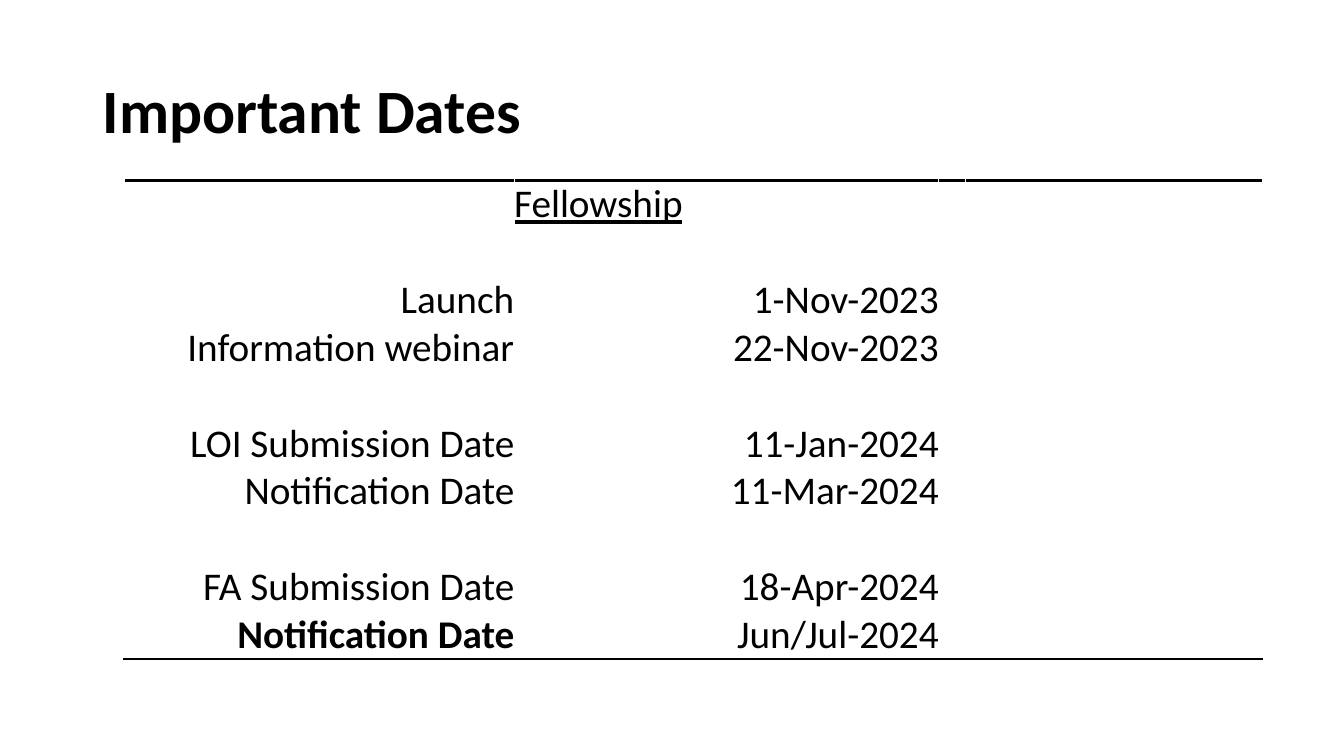
from lxml.etree import SubElement
from pptx import Presentation
from pptx.dml.color import RGBColor
from pptx.enum.text import MSO_ANCHOR, PP_ALIGN
from pptx.oxml.ns import qn
from pptx.util import Inches, Pt

TITLE = "Important Dates"
HEADING = "Fellowship"
SCHEDULE = [
    ("", HEADING),
    ("", ""),
    ("Launch", "1-Nov-2023"),
    ("Information webinar", "22-Nov-2023"),
    ("", ""),
    ("LOI Submission Date", "11-Jan-2024"),
    ("Notification Date", "11-Mar-2024"),
    ("", ""),
    ("FA Submission Date", "18-Apr-2024"),
    ("Notification Date", "Jun/Jul-2024"),
]
COLUMN_WIDTHS = [3.87, 4.21, 0.27, 2.94]
TABLE_LEFT, TABLE_TOP, TABLE_HEIGHT = 1.23, 1.79, 4.75
COLORS = {"text": "000000", "rule": "000000", "paper": "FFFFFF"}
FONT = "Calibri"
LAST_ROW = len(SCHEDULE) - 1


def add_text(paragraph, text, size, bold=False, underline=False):
    run = paragraph.add_run()
    run.text = text
    run.font.name = FONT
    run.font.size = Pt(size)
    run.font.bold = bold
    run.font.underline = underline
    run.font.color.rgb = RGBColor.from_string(COLORS["text"])


def add_border(cell, side):
    properties = cell._tc.get_or_add_tcPr()
    line = SubElement(properties, qn(f"a:ln{side}"), w=str(Pt(2)))
    fill = SubElement(line, qn("a:solidFill"))
    SubElement(fill, qn("a:srgbClr"), val=COLORS["rule"])
    properties.insert(0, line)


def add_title(slide):
    shape = slide.shapes.add_textbox(Inches(0.92), Inches(0.4), Inches(11.5), Inches(1.45))
    frame = shape.text_frame
    frame.word_wrap = True
    frame.vertical_anchor = MSO_ANCHOR.MIDDLE
    paragraph = frame.paragraphs[0]
    paragraph.line_spacing = 0.9
    add_text(paragraph, TITLE, 44, bold=True)


def fill_cell(cell, text, row):
    cell.fill.solid()
    cell.fill.fore_color.rgb = RGBColor.from_string(COLORS["paper"])
    cell.margin_left = cell.margin_right = cell.margin_top = cell.margin_bottom = 0
    cell.vertical_anchor = MSO_ANCHOR.BOTTOM
    if row == 0:
        add_border(cell, "T")
    if row == LAST_ROW:
        add_border(cell, "B")
    if text:
        paragraph = cell.text_frame.paragraphs[0]
        is_heading = text == HEADING
        paragraph.alignment = PP_ALIGN.LEFT if is_heading else PP_ALIGN.RIGHT
        is_final_notice = row == LAST_ROW and text == SCHEDULE[LAST_ROW][0]
        add_text(paragraph, text, 28, bold=is_final_notice, underline=is_heading)


def add_schedule(slide):
    table = slide.shapes.add_table(
        len(SCHEDULE), len(COLUMN_WIDTHS), Inches(TABLE_LEFT), Inches(TABLE_TOP),
        Inches(sum(COLUMN_WIDTHS)), Inches(TABLE_HEIGHT),
    ).table
    table.first_row = False
    table.horz_banding = False
    for column, width in zip(table.columns, COLUMN_WIDTHS):
        column.width = Inches(width)
    for row, entries in enumerate(SCHEDULE):
        for column in range(len(COLUMN_WIDTHS)):
            text = entries[column] if column < len(entries) else ""
            fill_cell(table.cell(row, column), text, row)


def main():
    presentation = Presentation()
    presentation.slide_width = Inches(13.33)
    presentation.slide_height = Inches(7.5)
    slide = presentation.slides.add_slide(presentation.slide_layouts[6])
    add_title(slide)
    add_schedule(slide)
    presentation.save("out.pptx")


if __name__ == "__main__":
    main()
